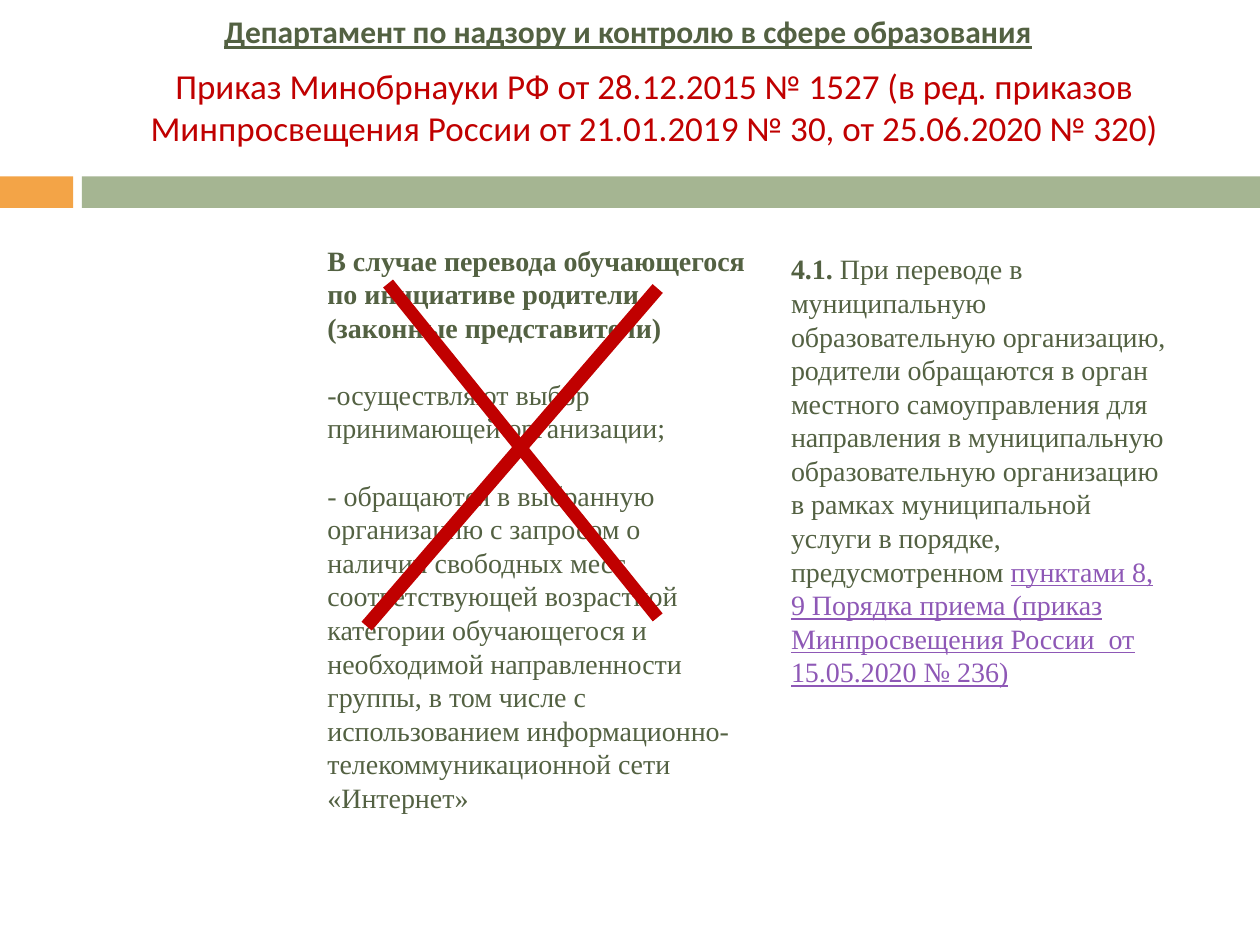
import pptx
import pptx.dml.color
import pptx.enum.shapes
import pptx.enum.text
import pptx.oxml.ns
import pptx.util
from lxml import etree
from pptx.util import Inches

GREEN = "536142"
RED = "C00000"
VIOLET = "8E58B6"
ALIGN = pptx.enum.text.PP_ALIGN
ANCHOR = pptx.enum.text.MSO_ANCHOR


def color(hex_string):
    """Turn a hex string into a colour."""
    return pptx.dml.color.RGBColor.from_string(hex_string)


def add_bar(slide, left, top, width, height, fill):
    """Add a plain filled rectangle."""
    shape = slide.shapes.add_shape(
        pptx.enum.shapes.MSO_SHAPE.RECTANGLE,
        Inches(left), Inches(top), Inches(width), Inches(height))
    shape.shadow.inherit = False
    shape.fill.solid()
    shape.fill.fore_color.rgb = color(fill)
    shape.line.fill.background()


def add_text(slide, box, paragraphs, font_name, size, text_color,
             align=ALIGN.LEFT, anchor=ANCHOR.TOP, gap=0):
    """Add a text box whose paragraphs are lists of (text, font settings)."""
    shape = slide.shapes.add_textbox(*map(Inches, box))
    frame = shape.text_frame
    frame.word_wrap = True
    frame.vertical_anchor = anchor
    for index, runs in enumerate(paragraphs):
        paragraph = frame.add_paragraph() if index else frame.paragraphs[0]
        paragraph.alignment = align
        paragraph.space_before = pptx.util.Pt(gap if index else 0)
        paragraph.font.name = font_name
        paragraph.font.size = pptx.util.Pt(size)
        paragraph.font.color.rgb = color(text_color)
        for text, settings in runs:
            run = paragraph.add_run()
            run.text = text
            run.font.bold = settings.get("bold")
            run.font.underline = settings.get("underline")
            if "color" in settings:
                run.font.color.rgb = color(settings["color"])


def add_stroke(slide, start, end, width):
    """Add one straight red stroke of the cross."""
    connector = slide.shapes.add_connector(
        pptx.enum.shapes.MSO_CONNECTOR.STRAIGHT,
        *map(Inches, start + end))
    connector.line.color.rgb = color(RED)
    connector.line.width = pptx.util.Pt(width)
    properties = connector._element.spPr
    etree.SubElement(properties, pptx.oxml.ns.qn("a:effectLst"))


def main():
    """Build the slide and save it."""
    presentation = pptx.Presentation()
    presentation.slide_width = Inches(10)
    presentation.slide_height = Inches(7.5)
    slide = presentation.slides.add_slide(presentation.slide_layouts[6])

    add_bar(slide, 0, 1.4, 0.58, 0.25, "F3A447")
    add_bar(slide, 0.65, 1.4, 9.35, 0.25, "A5B592")

    add_text(slide, (0.59, 0.37, 9.21, 0.95), [[
        ("Приказ Минобрнауки РФ от 28.12.2015 № 1527 (в ред. приказов "
         "Минпросвещения России от 21.01.2019 № 30, от 25.06.2020 № 320)", {}),
    ]], "Calibri", 20, RED, ALIGN.CENTER, ANCHOR.MIDDLE)

    add_text(slide, (6.18, 1.95, 3.23, 4.68), [[
        ("4.1. ", {"bold": True}),
        ("При переводе в муниципальную образовательную организацию, родители "
         "обращаются в орган местного самоуправления для направления в "
         "муниципальную образовательную организацию в рамках муниципальной "
         "услуги в порядке, предусмотренном ", {}),
        ("пунктами 8, 9 Порядка приема (приказ Минпросвещения России  от "
         "15.05.2020 № 236)", {"underline": True, "color": VIOLET}),
    ]], "Times New Roman", 16, GREEN)

    add_text(slide, (2.5, 1.88, 3.52, 4.95), [
        [("В случае перевода обучающегося по инициативе родители "
          "(законные представители)", {"bold": True})],
        [("-осуществляют выбор принимающей организации;", {})],
        [("- обращаются в выбранную организацию с запросом о наличии "
          "свободных мест соответствующей возрастной категории обучающегося и "
          "необходимой направленности группы, в том числе с использованием "
          "информационно-телекоммуникационной сети «Интернет»", {})],
    ], "Times New Roman", 16, GREEN, gap=19.2)

    add_stroke(slide, (3.08, 2.25), (5.22, 4.9), 7.25)
    add_stroke(slide, (5.22, 2.29), (2.91, 4.97), 7.75)

    add_text(slide, (1.22, 0.05, 7.07, 0.46), [[
        ("Департамент по надзору и контролю в сфере образования",
         {"bold": True, "underline": True}),
    ]], "Calibri", 18, GREEN, ALIGN.RIGHT)

    presentation.save("out.pptx")


if __name__ == "__main__":
    main()
